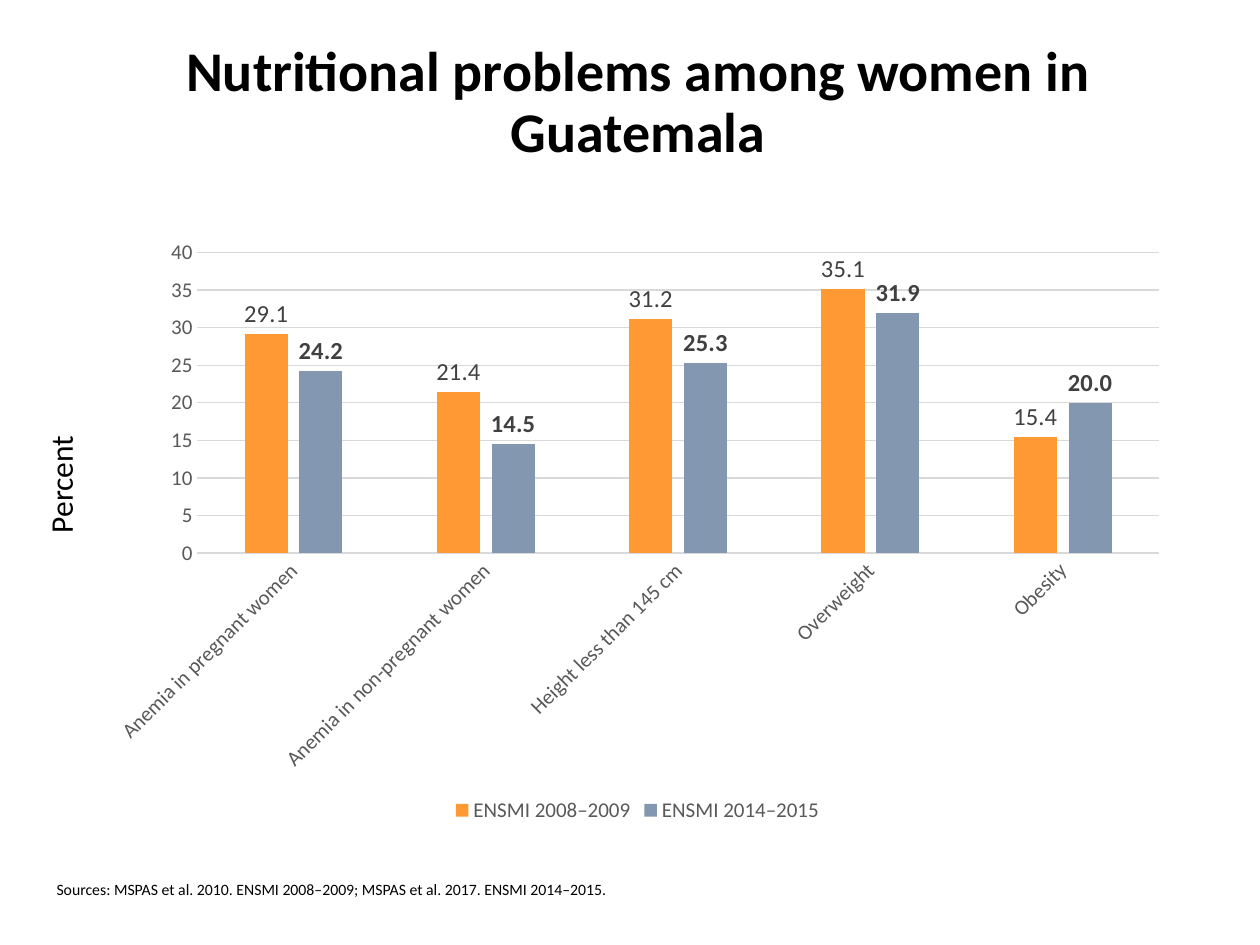
from pptx import Presentation
from pptx.chart.data import CategoryChartData
from pptx.dml.color import RGBColor
from pptx.enum.chart import XL_CHART_TYPE, XL_LABEL_POSITION, XL_LEGEND_POSITION, XL_TICK_MARK
from pptx.enum.shapes import MSO_SHAPE
from pptx.enum.text import MSO_ANCHOR, MSO_AUTO_SIZE, PP_ALIGN
from pptx.util import Inches, Pt

FONT = "Calibri"
GREY, LINE = "595959", "D9D9D9"
CATEGORIES = ["Anemia in pregnant women", "Anemia in non-pregnant women",
              "Height less than 145 cm", "Overweight", "Obesity"]
# name, values, fill colour, bold labels
SERIES = [
    ("ENSMI 2008–2009", (29.1, 21.4, 31.2, 35.1, 15.4), "FF9933", False),
    ("ENSMI 2014–2015", (24.2, 14.5, 25.3, 31.9, 20.0), "8497B0", True),
]


def rgb(value):
    return RGBColor.from_string(value)


def style_font(font, size, color="000000", bold=False):
    values = {"name": FONT, "size": Pt(size), "bold": bold}
    for name, value in values.items():
        setattr(font, name, value)
    font.color.rgb = rgb(color)


def place(sp, left, top, width, height):
    box = {"left": left, "top": top, "width": width, "height": height}
    for name, value in box.items():
        setattr(sp, name, Inches(value))


def write(sp, text, size, align, anchor, bold=False, wrap=True):
    tf = sp.text_frame
    values = {"word_wrap": wrap, "vertical_anchor": anchor}
    for name, value in values.items():
        setattr(tf, name, value)
    p = tf.paragraphs[0]
    p.alignment = align
    r = p.add_run()
    r.text = text
    style_font(r.font, size, bold=bold)
    return tf


def add_title(slide, text):
    sp = slide.shapes.title
    place(sp, 0.35, 0.2, 9.43, 1.25)
    tf = write(sp, text, 32, PP_ALIGN.CENTER, MSO_ANCHOR.MIDDLE, bold=True)
    tf.auto_size = MSO_AUTO_SIZE.NONE
    tf.paragraphs[0].line_spacing = 0.9


def add_source(slide, text):
    sp = slide.shapes.add_textbox(Inches(0.35), Inches(6.93), Inches(4.61), Inches(0.25))
    tf = write(sp, text, 9, PP_ALIGN.LEFT, MSO_ANCHOR.TOP, wrap=False)
    tf.auto_size = MSO_AUTO_SIZE.SHAPE_TO_FIT_TEXT


def add_axis_name(slide, text):
    sp = slide.shapes.add_shape(MSO_SHAPE.RECTANGLE, Inches(-0.26), Inches(3.25),
                                Inches(1.62), Inches(0.54))
    sp.rotation = 270
    sp.shadow.inherit = False
    sp.fill.solid()
    sp.fill.fore_color.rgb = rgb("FFFFFF")
    sp.line.fill.background()
    write(sp, text, 18, PP_ALIGN.LEFT, MSO_ANCHOR.TOP)


def style_axis(axis):
    values = {"major_tick_mark": XL_TICK_MARK.NONE, "minor_tick_mark": XL_TICK_MARK.NONE}
    for name, value in values.items():
        setattr(axis, name, value)
    style_font(axis.tick_labels.font, 12, GREY)


def style_line(line):
    line.color.rgb = rgb(LINE)
    line.width = Pt(0.75)


def style_series(series, color, bold):
    series.format.fill.solid()
    series.format.fill.fore_color.rgb = rgb(color)
    series.invert_if_negative = False
    labels = series.data_labels
    values = {"show_value": True, "number_format": "0.0",
              "number_format_is_linked": False,
              "position": XL_LABEL_POSITION.OUTSIDE_END}
    for name, value in values.items():
        setattr(labels, name, value)
    style_font(labels.font, 14, "404040", bold)


def add_column_chart(slide):
    data = CategoryChartData()
    data.categories = CATEGORIES
    for name, values, _, _ in SERIES:
        data.add_series(name, values)
    chart = slide.shapes.add_chart(XL_CHART_TYPE.COLUMN_CLUSTERED, Inches(0.75), Inches(1.81),
                                   Inches(8.62), Inches(4.76), data).chart
    chart.has_title = False
    style_font(chart.font, 10)

    # Columns and value labels
    plot = chart.plots[0]
    for name, value in {"gap_width": 219, "overlap": -27, "vary_by_categories": False}.items():
        setattr(plot, name, value)
    for series, (_, _, color, bold) in zip(plot.series, SERIES):
        style_series(series, color, bold)

    # Axes
    cat, val = chart.category_axis, chart.value_axis
    style_axis(cat)
    style_line(cat.format.line)
    cat.tick_labels.font._element.getparent().getparent().getparent().bodyPr.set("rot", "-2700000")
    style_axis(val)
    val.format.line.fill.background()
    style_line(val.major_gridlines.format.line)
    for name, value in {"minimum_scale": 0, "maximum_scale": 40, "major_unit": 5}.items():
        setattr(val, name, value)

    # Legend
    chart.has_legend = True
    legend = chart.legend
    legend.position = XL_LEGEND_POSITION.BOTTOM
    legend.include_in_layout = False
    style_font(legend.font, 12, GREY)


def main():
    prs = Presentation()
    prs.slide_width, prs.slide_height = Inches(10), Inches(7.5)
    slide = prs.slides.add_slide(prs.slide_layouts[5])
    add_title(slide, "Nutritional problems among women in Guatemala")
    add_source(slide, "Sources: MSPAS et al. 2010. ENSMI 2008–2009; "
                      "MSPAS et al. 2017. ENSMI 2014–2015.")
    add_column_chart(slide)
    add_axis_name(slide, "Percent")
    prs.save("out.pptx")


if __name__ == "__main__":
    main()
